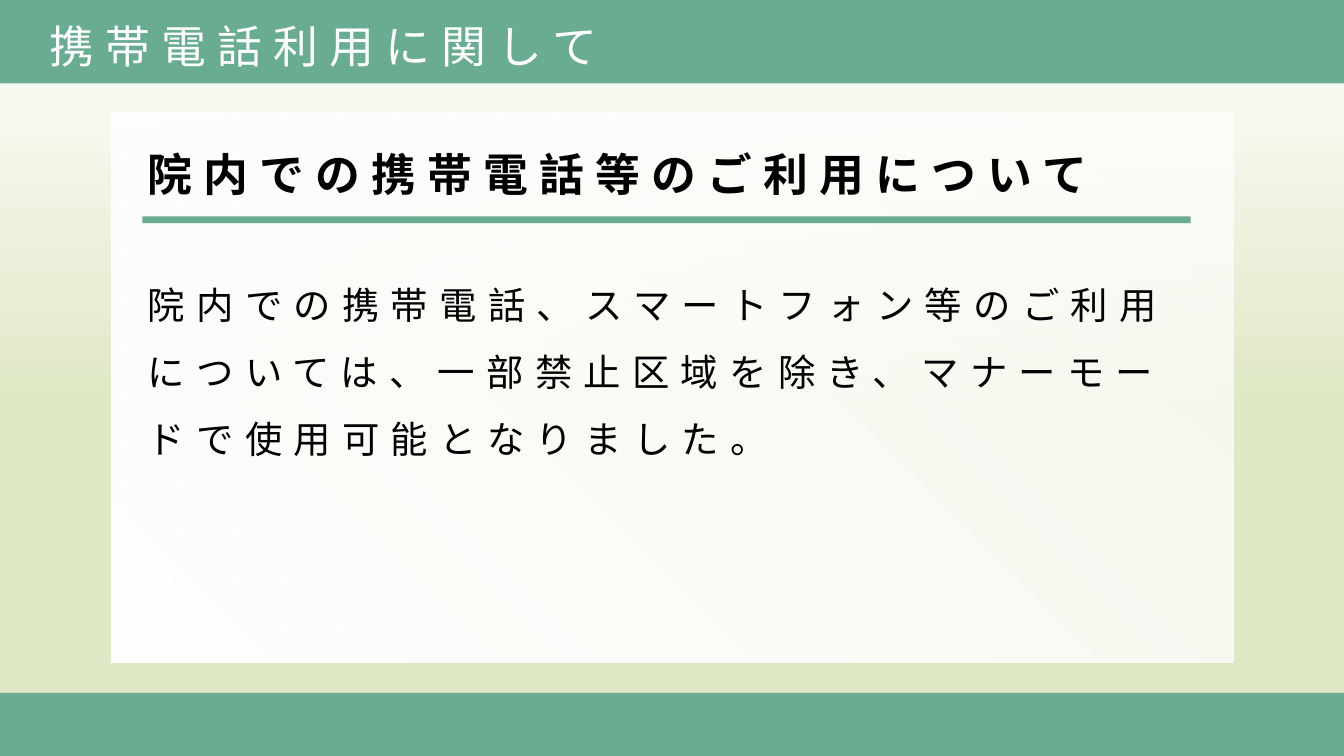
import pptx
import pptx.util
import pptx.dml.color
import pptx.enum.shapes
import pptx.enum.text
import pptx.oxml
import pptx.oxml.ns

# Content
TITLE = "携帯電話利用に関して"
HEADING = "院内での携帯電話等のご利用について"
BODY = ("院内での携帯電話、スマートフォン等のご利用については、"
        "一部禁止区域を除き、マナーモードで使用可能となりました。")

# Style
COLORS = {"green": "6AAC91", "pale": "DFE8C4", "white": "FFFFFF",
          "black": "000000", "gray": "979797"}
HEADING_FONT, BODY_FONT = "Noto Sans CJK JP", "Arial"
LETTER_SPACING = 6  # points

# Layout in inches: left, top, width, height
WIDTH = 10
HEIGHT = WIDTH * 9 / 16
FOOTER_HEIGHT = 0.47
HEADER = (0, 0, WIDTH, 0.62)
FOOTER = (0, HEIGHT - FOOTER_HEIGHT, WIDTH, FOOTER_HEIGHT)
CARD = (0.83, 0.84, 8.35, 4.09)
RULE = (1.06, 1.61, 7.8, 0.05)
TITLE_BOX = (0.27, 0.09, 8.12, 0.5)
HEADING_BOX = (1, 1.04, 8.19, 0.5)
BODY_BOX = (1, 1.88, 7.91, 1.57)


def rgb(name):
    return pptx.dml.color.RGBColor.from_string(COLORS[name])


def inches(box):
    return [pptx.util.Inches(length) for length in box]


def add_rectangle(slide, box):
    shape = slide.shapes.add_shape(
        pptx.enum.shapes.MSO_SHAPE.RECTANGLE, *inches(box))
    shape.shadow.inherit = False
    shape.fill.solid()
    shape.fill.fore_color.rgb = rgb("green")
    shape.line.fill.background()
    return shape


def fill_card(shape):
    """Radial fade from the bottom left corner to translucent white."""
    gradient = pptx.oxml.parse_xml(
        f'<a:gradFill {pptx.oxml.ns.nsdecls("a")} rotWithShape="1"><a:gsLst>'
        f'<a:gs pos="0"><a:srgbClr val="{COLORS["gray"]}"/></a:gs>'
        f'<a:gs pos="0"><a:srgbClr val="{COLORS["white"]}"/></a:gs>'
        f'<a:gs pos="100000"><a:srgbClr val="{COLORS["white"]}">'
        '<a:alpha val="66000"/></a:srgbClr></a:gs></a:gsLst>'
        '<a:path path="circle"><a:fillToRect t="100000" r="100000"/></a:path>'
        '</a:gradFill>')
    properties = shape._element.spPr
    solid = properties.find(pptx.oxml.ns.qn("a:solidFill"))
    properties.replace(solid, gradient)


def write_text(shape, box, text, size, font_name, color, bold=False,
               anchor=pptx.enum.text.MSO_ANCHOR.MIDDLE, line_spacing=1.0):
    shape.left, shape.top, shape.width, shape.height = inches(box)
    frame = shape.text_frame
    frame.word_wrap = True
    frame.auto_size = pptx.enum.text.MSO_AUTO_SIZE.NONE
    frame.vertical_anchor = anchor

    paragraph = frame.paragraphs[0]
    properties = paragraph._p.get_or_add_pPr()
    properties.set("marL", "0")
    properties.set("indent", "0")
    properties.append(pptx.oxml.parse_xml(
        f'<a:buNone {pptx.oxml.ns.nsdecls("a")}/>'))
    paragraph.alignment = pptx.enum.text.PP_ALIGN.LEFT
    paragraph.line_spacing = line_spacing
    paragraph.space_before = pptx.util.Pt(0)

    run = paragraph.add_run()
    run.text = text
    run.font.size = pptx.util.Pt(size)
    run.font.name = font_name
    run.font.bold = bold
    run.font.color.rgb = rgb(color)
    run_properties = run._r.get_or_add_rPr()
    run_properties.set("spc", str(LETTER_SPACING * 100))
    run_properties.find(pptx.oxml.ns.qn("a:latin")).addnext(
        pptx.oxml.parse_xml(f'<a:ea {pptx.oxml.ns.nsdecls("a")} '
                            f'typeface="{font_name}"/>'))


def main():
    presentation = pptx.Presentation()
    presentation.slide_width = pptx.util.Inches(WIDTH)
    presentation.slide_height = pptx.util.Inches(HEIGHT)
    slide = presentation.slides.add_slide(presentation.slide_layouts[1])
    title, body = slide.placeholders

    # Background: white at the top to pale green
    background = slide.background.fill
    background.gradient()
    background.gradient_angle = 270
    stops = zip(background.gradient_stops, (0, 0.54), ("white", "pale"))
    for stop, position, color in stops:
        stop.position = position
        stop.color.rgb = rgb(color)

    # Card and bands
    fill_card(add_rectangle(slide, CARD))
    for box in (FOOTER, HEADER):
        add_rectangle(slide, box)

    # Text and rule, with the placeholders brought in front of the card
    slide.shapes._spTree.append(body._element)
    heading = slide.shapes.add_textbox(*inches(HEADING_BOX))
    add_rectangle(slide, RULE)
    slide.shapes._spTree.append(title._element)
    write_text(title, TITLE_BOX, TITLE, 24, HEADING_FONT, "white")
    write_text(heading, HEADING_BOX, HEADING, 24, HEADING_FONT, "black",
               bold=True)
    write_text(body, BODY_BOX, BODY, 20, BODY_FONT, "black",
               anchor=pptx.enum.text.MSO_ANCHOR.TOP, line_spacing=1.5)

    presentation.save("out.pptx")


if __name__ == "__main__":
    main()
